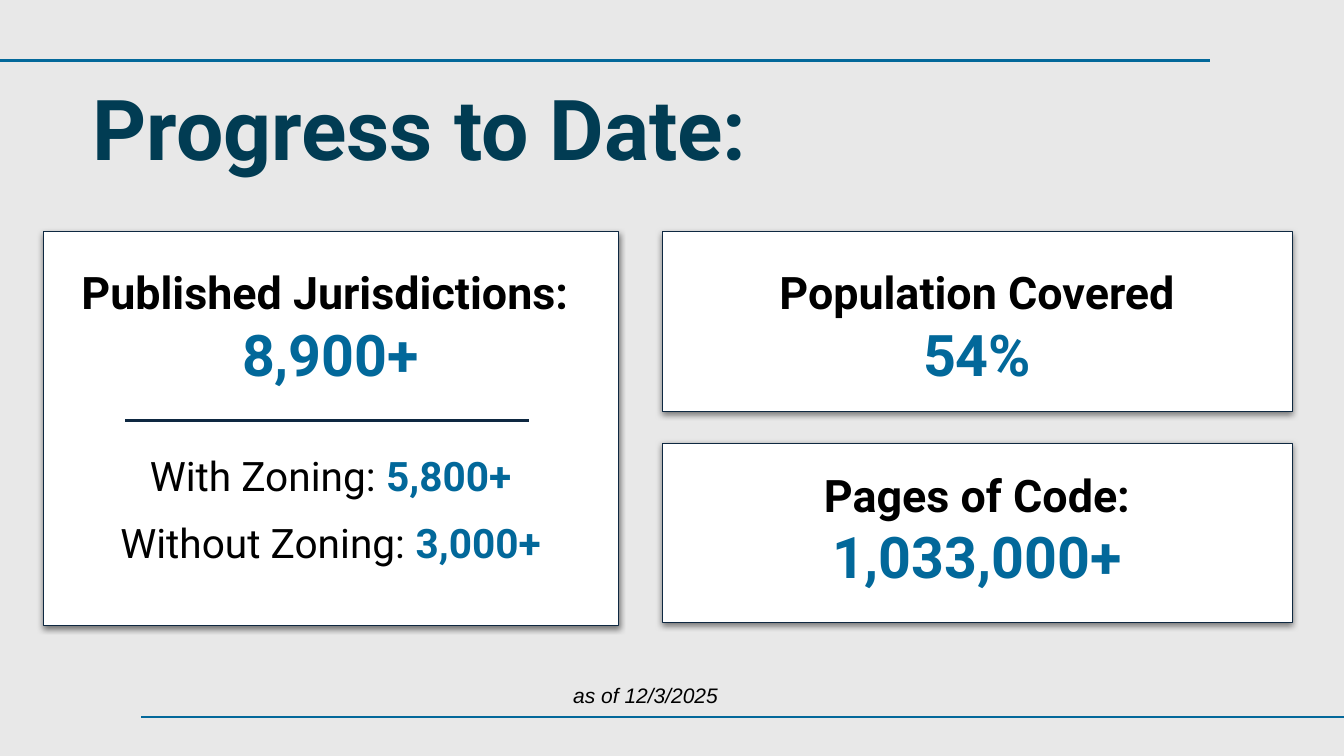
from lxml import etree
from pptx import Presentation
from pptx.dml.color import RGBColor
from pptx.enum.shapes import MSO_CONNECTOR as Connector, MSO_SHAPE as Shape
from pptx.enum.text import MSO_ANCHOR as Anchor, MSO_AUTO_SIZE as AutoSize, PP_ALIGN as Align
from pptx.oxml import parse_xml
from pptx.oxml.ns import qn
from pptx.util import Pt

NAVY, TEAL, BLUE, BLACK, WHITE, GREY = "0E2841", "013C53", "02689A", "000000", "FFFFFF", "E8E8E8"
RULE_BLUE = "03689A"
SHADOW = (
    '<a:effectLst xmlns:a="http://schemas.openxmlformats.org/drawingml/2006/main">'
    f'<a:outerShdw blurRad="{Pt(4.5)}" dist="{Pt(1.5)}" dir="5400000" algn="t" rotWithShape="0">'
    '<a:srgbClr val="000000"><a:alpha val="49000"/></a:srgbClr>'
    '</a:outerShdw></a:effectLst>'
)


def colour(hex_text):
    return RGBColor.from_string(hex_text)


class SlideBuilder:
    font = "Roboto"

    def __init__(self, page):
        self.page = page
        page.background.fill.solid()
        page.background.fill.fore_color.rgb = colour(GREY)

    def card(self, left, top, width, height):
        card = self.page.shapes.add_shape(
            Shape.RECTANGLE, Pt(left), Pt(top), Pt(width), Pt(height))
        card.fill.solid()
        card.fill.fore_color.rgb = colour(WHITE)
        card.line.color.rgb = colour(NAVY)
        card.line.width = Pt(0.75)
        card._element.spPr.append(parse_xml(SHADOW))

    def rule(self, left, right, y, width, hex_text):
        line = self.page.shapes.add_connector(
            Connector.STRAIGHT, Pt(left), Pt(y), Pt(right), Pt(y))
        line.line.color.rgb = colour(hex_text)
        line.line.width = Pt(width)
        etree.SubElement(line._element.spPr, qn("a:effectLst"))

    def span(self, para, text, size, hex_text, bold=False, italic=False, font=None):
        span = para.add_run()
        span.text = text
        span.font.name = font or self.font
        span.font.size = Pt(size)
        span.font.bold = bold
        span.font.italic = italic
        span.font.color.rgb = colour(hex_text)

    def frame(self, box, inset_y, anchor=Anchor.TOP):
        """Set the margins, wrapping and anchor of a text holder."""
        frame = box.text_frame
        frame.word_wrap = True
        frame.auto_size = AutoSize.NONE
        frame.vertical_anchor = anchor
        frame.margin_left = frame.margin_right = Pt(7.2)
        frame.margin_top = frame.margin_bottom = Pt(inset_y)
        return frame

    def title(self, text, left, top, width, height):
        box = self.page.shapes.title
        box.left, box.top, box.width, box.height = Pt(left), Pt(top), Pt(width), Pt(height)
        para = self.frame(box, 7.2, Anchor.MIDDLE).paragraphs[0]
        para.alignment = Align.LEFT
        para.line_spacing = 0.9
        self.span(para, text, 60, TEAL, bold=True)

    def text(self, left, top, width, height, lines, inset_y=3.6):
        """Add centred text; each line is a list of argument tuples for span."""
        box = self.page.shapes.add_textbox(Pt(left), Pt(top), Pt(width), Pt(height))
        frame = self.frame(box, inset_y)
        for index, spans in enumerate(lines):
            para = frame.add_paragraph() if index else frame.paragraphs[0]
            para.alignment = Align.CENTER
            for span in spans:
                self.span(para, *span)

    def headline(self, left, top, width, label, value):
        self.text(left, top, width, 95.8,
                  [[(label, 32, BLACK, True)], [(value, 41, BLUE, True)]])

    def detail(self, left, top, width, label, value):
        self.text(left, top, width, 42.5,
                  [[(label, 29, BLACK), (value, 29, BLUE, True)]])


def main():
    deck = Presentation()
    deck.slide_width, deck.slide_height = Pt(960), Pt(540)
    builder = SlideBuilder(deck.slides.add_slide(deck.slide_layouts[5]))

    right_left, right_width = 473, 450
    text_left, text_width = 35.3, 401.8
    for top in (316.8, 165.6):
        builder.card(right_left, top, right_width, 128.2)
    builder.card(31, 165.6, 411, 281.5)

    builder.title("Progress to Date:", 59, 56.9, 864, 76.3)
    builder.headline(text_left, 185.8, text_width, "Published Jurisdictions: ", "8,900+")
    builder.detail(text_left, 318.2, text_width, "With Zoning: ", "5,800+")
    builder.detail(text_left, 366.5, text_width, "Without Zoning: ", "3,000+")
    builder.headline(right_left, 185.8, right_width, "Population Covered", "54%")
    builder.headline(right_left, 330.2, right_width, "Pages of Code:", "1,033,000+")
    builder.rule(89.3, 378, 300.2, 2.25, NAVY)

    builder.text(352.1, 480.2, 218.2, 26.6,
                 [[("as of 12/3/2025", 15, BLACK, False, True, "Arial")]], inset_y=7.2)
    builder.rule(0, 864, 43, 2, RULE_BLUE)
    builder.rule(100.8, 960, 511.9, 1.5, RULE_BLUE)

    deck.save("out.pptx")


if __name__ == "__main__":
    main()
